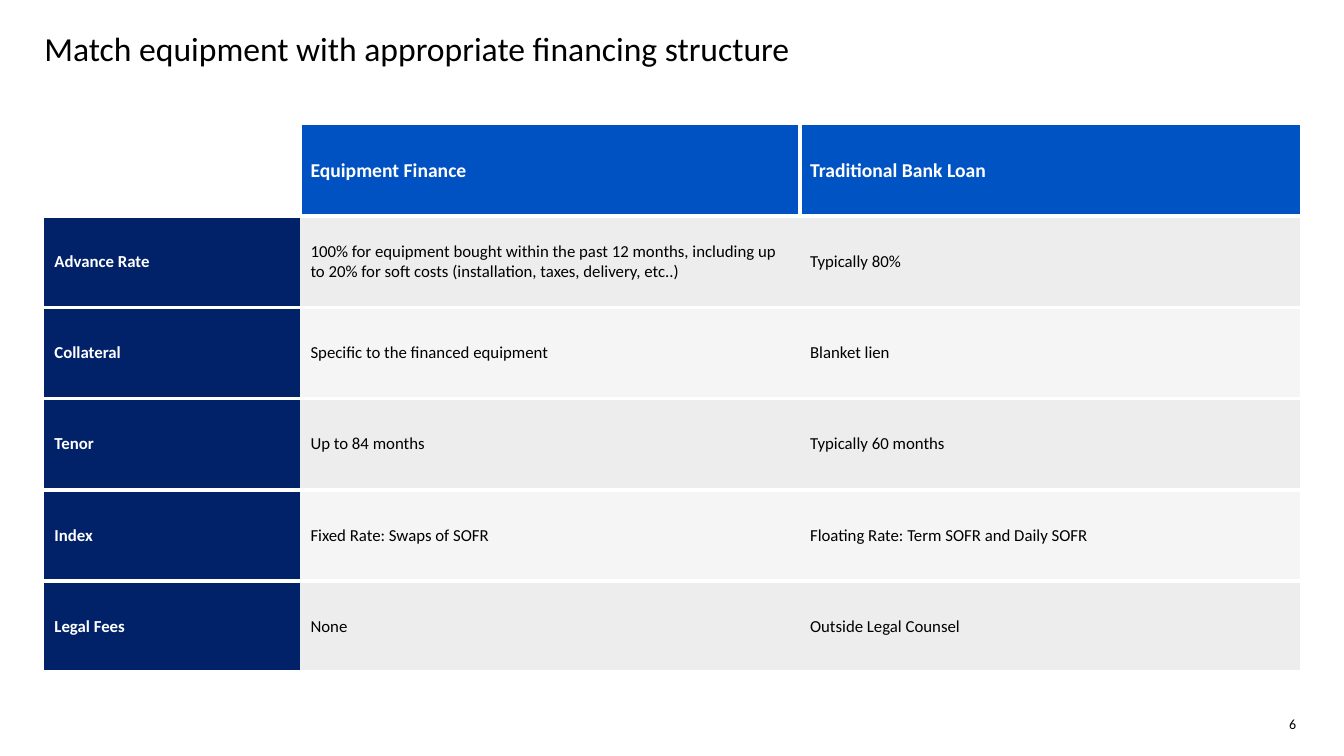
from dataclasses import dataclass

from lxml import etree
from pptx import Presentation
from pptx import util as u
from pptx.dml.color import RGBColor
from pptx.enum import text
from pptx.oxml import ns


@dataclass(frozen=True)
class Theme:
    font: str = "Calibri"
    black: str = "000000"
    white: str = "FFFFFF"
    headers: tuple = ("0051C2", "0053C2")
    label: str = "012169"
    bands: tuple = ("EDEDED", "F5F5F5")
    title_size: int = 24
    header_size: int = 14
    body_size: int = 12
    number_size: int = 10
    rule: float = 3


THEME = Theme()

HEADERS = ("Equipment Finance", "Traditional Bank Loan")
TERMS = (
    ("Advance Rate",
     "100% for equipment bought within the past 12 months, including up to 20% "
     "for soft costs (installation, taxes, delivery, etc..)",
     "Typically 80%"),
    ("Collateral", "Specific to the financed equipment", "Blanket lien"),
    ("Tenor", "Up to 84 months", "Typically 60 months"),
    ("Index", "Fixed Rate: Swaps of SOFR", "Floating Rate: Term SOFR and Daily SOFR"),
    ("Legal Fees", "None", "Outside Legal Counsel"),
)


def write(tf, words, size, color, bold=False, align=text.PP_ALIGN.LEFT):
    p = tf.paragraphs[0]
    p.alignment = align
    r = p.add_run()
    r.text = words
    for name, value in {"name": THEME.font, "size": u.Pt(size), "bold": bold}.items():
        setattr(r.font, name, value)
    r.font.color.rgb = RGBColor.from_string(color)


def set_borders(cell, ruled):
    """Draw a white rule on the ruled sides and nothing on the others."""
    tc_pr = cell._tc.get_or_add_tcPr()
    for side in "LRTB":
        ln = etree.SubElement(tc_pr, ns.qn(f"a:ln{side}"), w=str(u.Pt(THEME.rule)))
        if side in ruled:
            fill = etree.SubElement(ln, ns.qn("a:solidFill"))
            etree.SubElement(fill, ns.qn("a:srgbClr"), val=THEME.white)
        else:
            etree.SubElement(ln, ns.qn("a:noFill"))


def fill_cell(cell, words, fill, size, color, bold, ruled):
    cell.vertical_anchor = text.MSO_ANCHOR.MIDDLE
    set_borders(cell, ruled)
    cell.fill.solid()
    cell.fill.fore_color.rgb = RGBColor.from_string(fill)
    write(cell.text_frame, words, size, color, bold)


def add_title(s, left, top, width, height):
    tf = s.shapes.add_textbox(*map(u.Inches, (left, top, width, height))).text_frame
    for name, value in {"word_wrap": True, "margin_left": 0, "margin_right": 0}.items():
        setattr(tf, name, value)
    write(tf, "Match equipment with appropriate financing structure",
          THEME.title_size, THEME.black)


def add_comparison(s, left, top, width, height):
    rows, label_width = len(TERMS) + 1, 2.54
    frame = s.shapes.add_table(rows, 3, *map(u.Inches, (left, top, width, height)))
    table = frame.table
    term_width = (width - label_width) / 2
    for col, col_width in zip(table.columns, (label_width, term_width, term_width)):
        col.width = u.Inches(col_width)
    for row in table.rows:
        row.height = u.Inches(height / rows)

    # Header row, with an empty corner
    corner = table.cell(0, 0)
    set_borders(corner, "RB")
    corner.fill.background()
    for c, (words, fill) in enumerate(zip(HEADERS, THEME.headers), 1):
        fill_cell(table.cell(0, c), words, fill, THEME.header_size, THEME.white,
                  True, "LRB" if c == 1 else "LB")

    # One row per term: dark label, then banded values
    for i, term in enumerate(TERMS):
        band = THEME.bands[i % 2]
        for c, words in enumerate(term):
            is_label = c == 0
            fill_cell(table.cell(i + 1, c), words, THEME.label if is_label else band,
                      THEME.body_size, THEME.white if is_label else THEME.black,
                      is_label, "TB")


def add_page_number(s, left, top, width, height):
    tf = s.shapes.add_textbox(*map(u.Inches, (left, top, width, height))).text_frame
    tf.word_wrap = True
    write(tf, "6", THEME.number_size, THEME.black, align=text.PP_ALIGN.CENTER)


def main():
    prs = Presentation()
    prs.slide_width, prs.slide_height = u.Inches(13.33), u.Inches(7.5)
    s = prs.slides.add_slide(prs.slide_layouts[6])
    margin, content_width = 0.44, 12.45
    add_title(s, margin, 0.23, content_width, 0.78)
    add_comparison(s, margin, 1.24, content_width, 5.43)
    add_page_number(s, 12.42, 7.05, 0.8, 0.25)
    prs.save("out.pptx")


if __name__ == "__main__":
    main()
